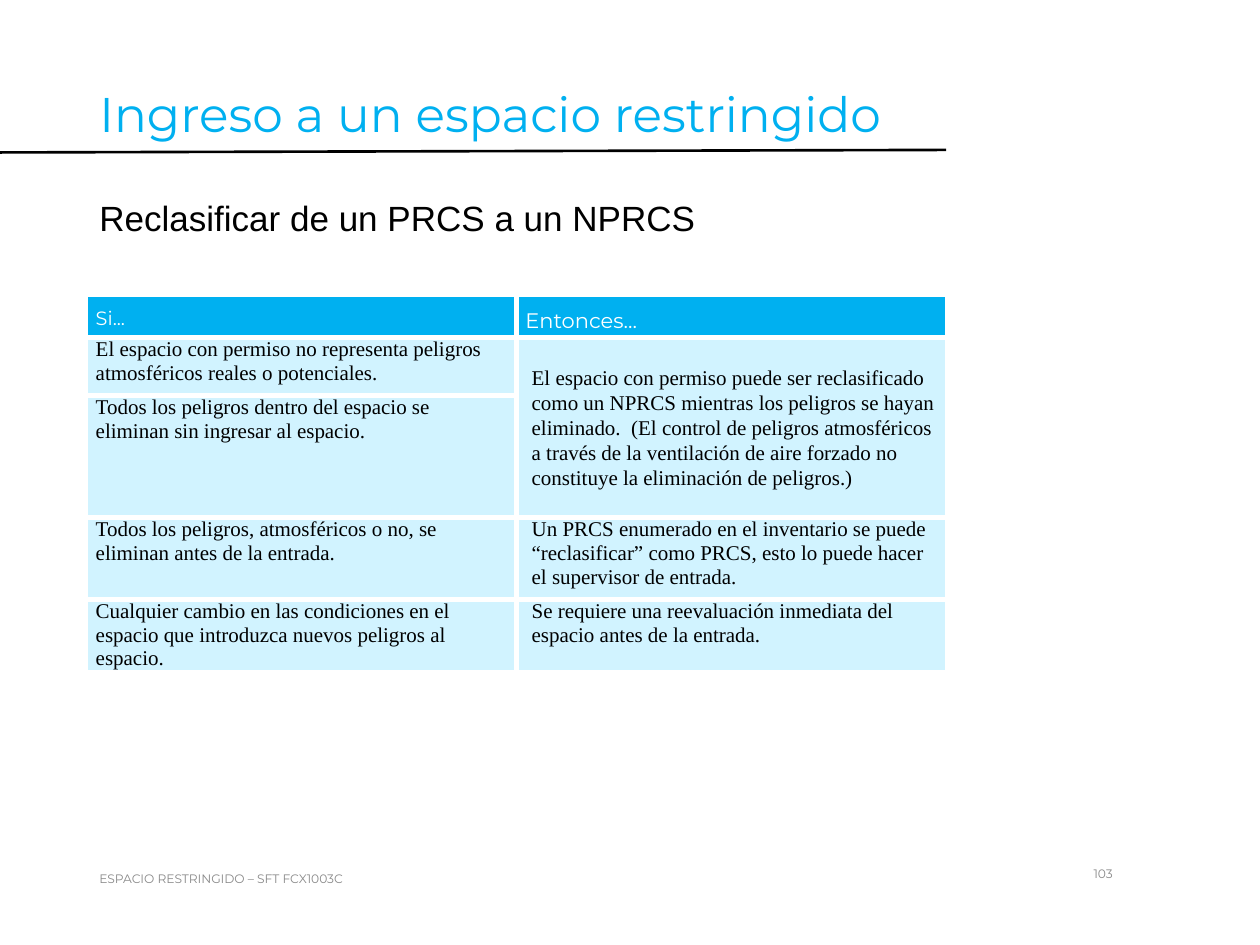
from pptx import Presentation
from pptx.dml.color import RGBColor
from pptx.enum.shapes import MSO_CONNECTOR
from pptx.enum.text import MSO_ANCHOR, PP_ALIGN
from pptx.oxml.ns import qn
from pptx.util import Inches, Pt
from lxml import etree

BLACK = RGBColor(0, 0, 0)
WHITE = RGBColor(255, 255, 255)
GRAY = RGBColor(0x89, 0x89, 0x89)
BLUE = RGBColor(0x00, 0xB0, 0xF0)
PALE = RGBColor(0xD1, 0xF3, 0xFF)
SANS, HEAD, SERIF = "Arial", "Montserrat", "Times New Roman"
LEFT, CENTER, JUST = PP_ALIGN.LEFT, PP_ALIGN.CENTER, PP_ALIGN.JUSTIFY
TOP, MIDDLE = MSO_ANCHOR.TOP, MSO_ANCHOR.MIDDLE
STRAIGHT = MSO_CONNECTOR.STRAIGHT

HEADS = [("Si...", 11), ("Entonces...", 12)]
CAUSES = [
    "El espacio con permiso no representa peligros atmosféricos reales o potenciales.",
    "Todos los peligros dentro del espacio se eliminan sin ingresar al espacio.",
    "Todos los peligros, atmosféricos o no, se eliminan antes de la entrada.",
    "Cualquier cambio en las condiciones en el espacio que introduzca nuevos "
    "peligros al espacio.",
]
# Row number, text and line spacing of each outcome
RESULTS = [
    (1, "El espacio con permiso puede ser reclasificado como un NPRCS mientras los "
        "peligros se hayan eliminado.  (El control de peligros atmosféricos a través "
        "de la ventilación de aire forzado no constituye la eliminación de peligros.)",
     1.07),
    (3, "Un PRCS enumerado en el inventario se puede “reclasificar” como PRCS, "
        "esto lo puede hacer el supervisor de entrada.", Pt(13.5)),
    (4, "Se requiere una reevaluación inmediata del espacio antes de la entrada.",
     Pt(13.5)),
]
ROWS = [0.34, 0.46, 0.97, 0.65, 0.58, 0.22]
COL = 3.41


def style(frame, text, font, size, color, align=LEFT, space=None):
    frame.text = text
    par = frame.paragraphs[0]
    par.alignment = align
    if space:
        par.line_spacing = space
    run = par.runs[0].font
    run.name, run.size = font, Pt(size)
    run.color.rgb = color
    return par


def add_text(slide, box, text, font, size, color, align=LEFT, anchor=TOP, space=None):
    frame = slide.shapes.add_textbox(*map(Inches, box)).text_frame
    frame.word_wrap = True
    frame.vertical_anchor = anchor
    style(frame, text, font, size, color, align, space)


def add_rule(slide, start, end):
    line = slide.shapes.add_connector(STRAIGHT, *map(Inches, start + end))
    line.line.color.rgb = BLACK
    line.line.width = Pt(1.5)
    etree.SubElement(line._element.spPr, qn("a:effectLst"))


def set_cell(cell, color, sides):
    cell.margin_left = cell.margin_right = Inches(0.07)
    cell.margin_top = cell.margin_bottom = 0
    props = cell._tc.get_or_add_tcPr()
    for side in sides:
        edge = etree.SubElement(props, qn("a:ln" + side), w=str(Pt(3)))
        paint = etree.SubElement(edge, qn("a:solidFill"))
        etree.SubElement(paint, qn("a:srgbClr"), val=str(WHITE))
    cell.fill.solid()
    cell.fill.fore_color.rgb = color


def add_grid(slide):
    shape = slide.shapes.add_table(len(ROWS), 2, Inches(0.69), Inches(2.34),
                                   Inches(2 * COL), Inches(sum(ROWS)))
    grid = shape.table
    for col in grid.columns:
        col.width = Inches(COL)
    for row, high in zip(grid.rows, ROWS):
        row.height = Inches(high)

    # Fills and white gaps
    last = len(ROWS) - 1
    for i in range(len(ROWS)):
        color = BLUE if i == 0 else WHITE if i == last else PALE
        for j, sides in enumerate(("RTB", "LTB")):
            set_cell(grid.cell(i, j), color, "T" if i == last else sides)
    grid.cell(1, 1).merge(grid.cell(2, 1))
    grid.cell(last, 0).merge(grid.cell(last, 1))
    for j in range(2):
        par = grid.cell(last, j).text_frame.paragraphs[0]
        etree.SubElement(par._p, qn("a:endParaRPr"), sz="1000")

    # Header
    for j, (text, size) in enumerate(HEADS):
        style(grid.cell(0, j).text_frame, text, HEAD, size, WHITE, JUST, 1.5)

    # Conditions
    for i, text in enumerate(CAUSES, 1):
        par = style(grid.cell(i, 0).text_frame, text, SERIF, 12, BLACK, space=Pt(13.5))
        if i > 1:
            par.space_after = Pt(6)

    # Outcomes
    for i, text, space in RESULTS:
        par = style(grid.cell(i, 1).text_frame, text, SERIF, 12, BLACK, space=space)
        par.space_after = Pt(6)
        par._p.get_or_add_pPr().set("marL", str(Inches(0.05)))
    grid.cell(1, 1).vertical_anchor = MIDDLE


def main():
    deck = Presentation()
    deck.slide_width, deck.slide_height = Inches(10), Inches(7.5)
    slide = deck.slides.add_slide(deck.slide_layouts[6])

    # Title and subtitle
    add_rule(slide, (0, 1.21), (7.51, 1.19))
    add_text(slide, (0.69, 0.67, 7.46, 0.84), "Ingreso a un espacio restringido",
             HEAD, 27.8, BLUE, space=0.9)
    add_text(slide, (0.69, 1.51, 6.82, 0.6), "Reclasificar de un PRCS a un NPRCS",
             SANS, 20, BLACK)

    add_grid(slide)

    # Footer
    add_text(slide, (0.69, 6.77, 6, 0.4), "ESPACIO RESTRINGIDO – SFT FCX1003C",
             HEAD, 7, GRAY, anchor=MIDDLE)
    add_text(slide, (7.51, 6.73, 2.49, 0.4), "103", HEAD, 7, GRAY, CENTER, MIDDLE)
    deck.save("out.pptx")


if __name__ == "__main__":
    main()
